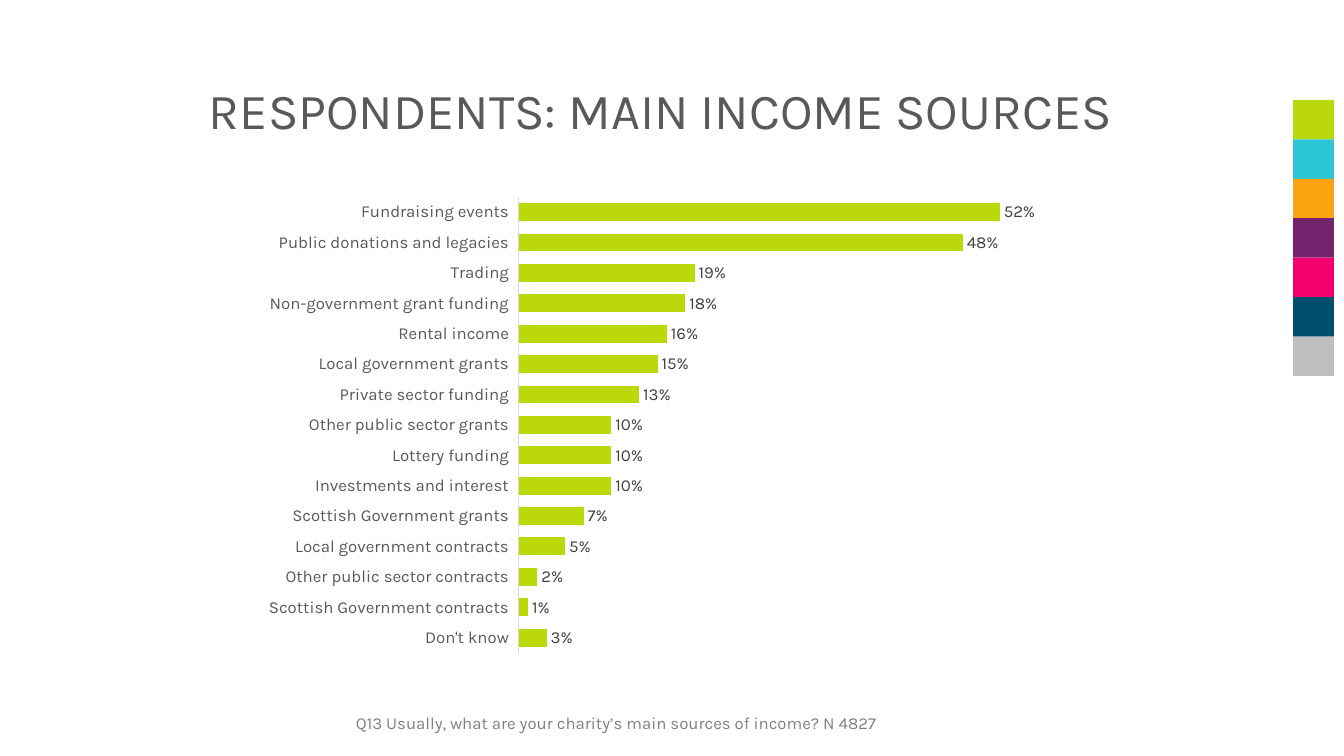
from lxml import etree
from pptx import Presentation
from pptx.chart.data import CategoryChartData
from pptx.dml.color import RGBColor
from pptx.enum.chart import XL_CHART_TYPE as ChartType, XL_LABEL_POSITION as LabelPos
from pptx.enum.chart import XL_TICK_LABEL_POSITION as TickLabelPos, XL_TICK_MARK as TickMark
from pptx.enum.shapes import MSO_SHAPE as Shape
from pptx.enum.text import MSO_ANCHOR as Anchor
from pptx.oxml.ns import qn
from pptx.util import Pt

TITLE = "RESPONDENTS: MAIN INCOME SOURCES"
QUESTION = "Q13 Usually, what are your charity’s main sources of income? N 4827"
INCOME_SOURCES = [
    ("Fundraising events", 0.52),
    ("Public donations and legacies", 0.48),
    ("Trading", 0.19),
    ("Non-government grant funding", 0.18),
    ("Rental income", 0.16),
    ("Local government grants", 0.15),
    ("Private sector funding", 0.13),
    ("Other public sector grants", 0.10),
    ("Lottery funding", 0.10),
    ("Investments and interest", 0.10),
    ("Scottish Government grants", 0.07),
    ("Local government contracts", 0.05),
    ("Other public sector contracts", 0.02),
    ("Scottish Government contracts", 0.01),
    ("Don't know", 0.03),
]

LIME = RGBColor(0xBA, 0xD8, 0x0A)
TURQUOISE = RGBColor(0x2D, 0xC6, 0xD6)
ORANGE = RGBColor(0xFC, 0xA3, 0x11)
PURPLE = RGBColor(0x72, 0x24, 0x6C)
PINK = RGBColor(0xF2, 0x00, 0x6E)
NAVY = RGBColor(0x00, 0x4F, 0x6D)
SILVER = RGBColor(0xBF, 0xBF, 0xBF)
PALETTE = [LIME, TURQUOISE, ORANGE, PURPLE, PINK, NAVY, SILVER]
DARK_GREY = RGBColor(0x59, 0x59, 0x59)
MID_GREY = RGBColor(0x80, 0x80, 0x80)
LABEL_GREY = RGBColor(0x40, 0x40, 0x40)
AXIS_GREY = RGBColor(0xD9, 0xD9, 0xD9)
FONT = "Karla"

SLIDE_SIZE = (1344, 756)
TITLE_BOX = (199, 40, 951, 146)
CHART_BOX = (258, 186, 834, 476)
PLOT_BOX = (519, 197, 555, 456)
QUESTION_BOX = (346, 706, 547, 32)
SWATCH_LEFT, SWATCH_TOP, SWATCH_WIDTH = 1293, 100, 41
SWATCHES_HEIGHT = 276


def emu(*lengths):
    return [round(length * 914400 / 100.8) for length in lengths]


def set_font(font, size, color):
    font.name, font.size = FONT, Pt(size)
    font.color.rgb = color


def add_text(slide, box, text, *, size, color, spacing, after=0, anchor=Anchor.TOP):
    frame = slide.shapes.add_textbox(*emu(*box)).text_frame
    frame.word_wrap = True
    frame.vertical_anchor = anchor
    paragraph = frame.paragraphs[0]
    paragraph.line_spacing = spacing
    paragraph.space_after = Pt(after)
    run = paragraph.add_run()
    run.text = text
    set_font(run.font, size, color)


def add_swatches(slide):
    pitch = SWATCHES_HEIGHT / len(PALETTE)
    for row, color in enumerate(PALETTE):
        box = emu(SWATCH_LEFT, SWATCH_TOP + row * pitch, SWATCH_WIDTH, pitch)
        swatch = slide.shapes.add_shape(Shape.RECTANGLE, *box)
        swatch.shadow.inherit = False
        swatch.fill.solid()
        swatch.fill.fore_color.rgb = color
        swatch.line.fill.background()


def place_plot(chart):
    left, top, width, height = CHART_BOX
    plot_left, plot_top, plot_width, plot_height = PLOT_BOX
    area = chart.plots[0]._element.getparent()
    for old in area.findall(qn("c:layout")):
        area.remove(old)
    layout = etree.Element(qn("c:layout"))
    area.insert(0, layout)
    manual = etree.SubElement(layout, qn("c:manualLayout"))
    settings = {
        "layoutTarget": "inner", "xMode": "edge", "yMode": "edge",
        "x": (plot_left - left) / width, "y": (plot_top - top) / height,
        "w": plot_width / width, "h": plot_height / height,
    }
    for tag, value in settings.items():
        etree.SubElement(manual, qn(f"c:{tag}")).set("val", str(value))


def add_income_chart(slide):
    data = CategoryChartData(number_format="0%")
    data.categories = [source for source, share in INCOME_SOURCES]
    data.add_series("Series 1", [share for source, share in INCOME_SOURCES])
    chart = slide.shapes.add_chart(ChartType.BAR_CLUSTERED, *emu(*CHART_BOX), data).chart
    chart.has_title = chart.has_legend = False
    set_font(chart.font, 12, DARK_GREY)

    sources = chart.category_axis
    sources.reverse_order = True
    sources.has_major_gridlines = False
    sources.major_tick_mark = sources.minor_tick_mark = TickMark.NONE
    sources.tick_label_position = TickLabelPos.LOW
    set_font(sources.tick_labels.font, 12, DARK_GREY)
    sources.format.line.color.rgb = AXIS_GREY
    sources.format.line.width = Pt(0.75)

    shares = chart.value_axis
    shares.visible = shares.has_major_gridlines = False
    shares.minimum_scale, shares.maximum_scale = 0, 0.6

    plot = chart.plots[0]
    plot.gap_width = 70
    plot.vary_by_categories = False
    bars = plot.series[0]
    bars.format.fill.solid()
    bars.format.fill.fore_color.rgb = LIME
    labels = bars.data_labels
    labels.show_value = True
    labels.position = LabelPos.OUTSIDE_END
    labels.number_format = "0%"
    labels.number_format_is_linked = False
    set_font(labels.font, 12, LABEL_GREY)
    place_plot(chart)


def main():
    deck = Presentation()
    deck.slide_width, deck.slide_height = emu(*SLIDE_SIZE)
    slide = deck.slides.add_slide(deck.slide_layouts[6])
    add_swatches(slide)
    add_text(slide, TITLE_BOX, TITLE, size=36, color=DARK_GREY, spacing=0.9, anchor=Anchor.MIDDLE)
    add_income_chart(slide)
    add_text(slide, QUESTION_BOX, QUESTION, size=12, color=MID_GREY, spacing=1.07, after=8)
    deck.save("out.pptx")


if __name__ == "__main__":
    main()
